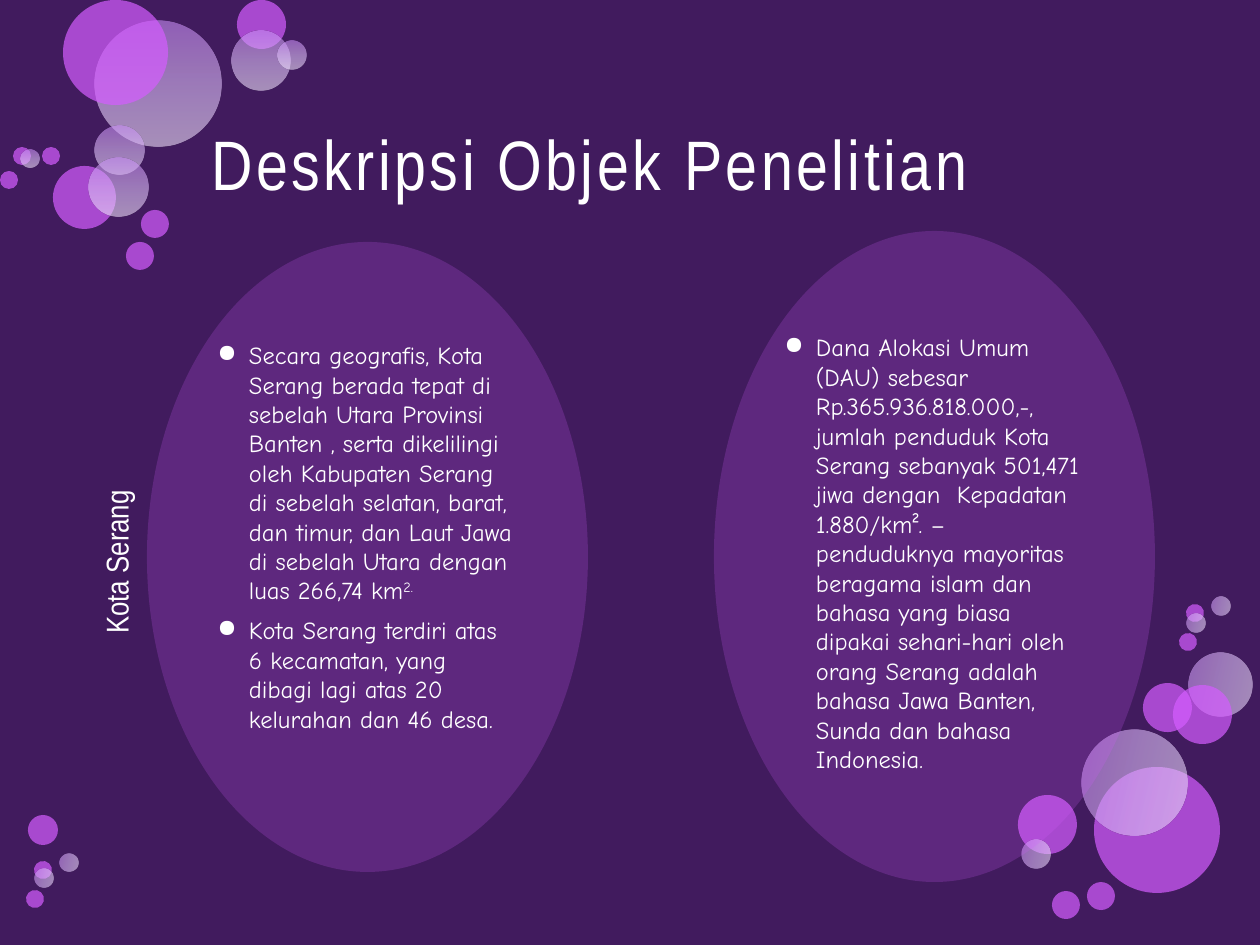
from lxml.etree import SubElement
from pptx import Presentation
from pptx.dml.color import RGBColor
from pptx.enum.shapes import MSO_SHAPE
from pptx.enum.text import MSO_ANCHOR, PP_ALIGN
from pptx.oxml.ns import qn
from pptx.util import Pt

PX = 914400 / 126
COLORS = {
    "background": "411B5E",
    "text": "FFFFFF",
    "vivid": "D55DFF",
    "pale_top": "C68CF2",
    "pale_middle": "DABAF5",
    "pale_bottom": "ECDEF9",
}
HEADING_FONT, BODY_FONT = "Arial Narrow", "Comic Neue"
TILT = 103.3

# Bubbles: left, top, diameter, tone
TOP_BUBBLES = [
    (95, 21, 126, "pale"), (53, 166, 63, "vivid"), (95, 126, 49, "pale"),
    (89, 158, 59, "pale"), (63, 0, 105, "vivid"), (237, 0, 49, "vivid"),
    (231, 31, 59, "pale"), (278, 41, 28, "pale"), (141, 210, 28, "vivid"),
    (13, 147, 18, "vivid"), (126, 242, 28, "vivid"), (0, 171, 18, "vivid"),
    (21, 150, 18, "pale"), (42, 147, 18, "vivid"),
]
BOTTOM_BUBBLES = [
    (1094, 767, 126, "vivid"), (1189, 653, 63, "pale"), (1143, 683, 49, "vivid"),
    (1173, 685, 59, "vivid"), (1082, 730, 105, "pale"), (28, 815, 30, "vivid"),
    (1018, 795, 59, "vivid"), (1022, 840, 28, "pale"), (1052, 891, 28, "vivid"),
    (1186, 604, 18, "vivid"), (1087, 882, 28, "vivid"), (1212, 597, 18, "pale"),
    (1187, 614, 18, "pale"), (1179, 633, 18, "vivid"), (34, 861, 18, "vivid"),
    (60, 854, 18, "pale"), (35, 869, 18, "pale"), (26, 890, 18, "vivid"),
]

GEOGRAPHY = (
    "Secara geografis, Kota Serang berada tepat di sebelah Utara Provinsi Banten , "
    "serta dikelilingi oleh Kabupaten Serang di sebelah selatan, barat, dan timur, "
    "dan Laut Jawa di sebelah Utara dengan luas 266,74 km"
)
DISTRICTS = (
    "Kota Serang terdiri atas 6 kecamatan, yang dibagi lagi atas 20 kelurahan "
    "dan 46 desa."
)
POPULATION = (
    "Dana Alokasi Umum (DAU) sebesar Rp.365.936.818.000,-, jumlah penduduk Kota "
    "Serang sebanyak 501,471 jiwa dengan  Kepadatan 1.880/km². – penduduknya "
    "mayoritas beragama islam dan bahasa yang biasa dipakai sehari-hari oleh orang "
    "Serang adalah  bahasa Jawa Banten, Sunda dan bahasa Indonesia."
)


def px(length):
    return round(length * PX)


def add_text(paragraph, text, *, font, size, spacing=0, raised=0):
    run = paragraph.add_run()
    run.text = text
    run.font.name = font
    run.font.size = Pt(size)
    run.font.color.rgb = RGBColor.from_string(COLORS["text"])
    if spacing:
        run.font._element.set("spc", str(spacing * 100))
    if raised:
        run.font._element.set("baseline", str(raised * 1000))


def set_alpha(color, percent):
    SubElement(color, qn("a:alpha")).set("val", str(percent * 1000))


class SlideBuilder:
    def __init__(self, slide):
        self.slide = slide
        slide.background.fill.solid()
        slide.background.fill.fore_color.rgb = RGBColor.from_string(COLORS["background"])

    def ellipse(self, left, top, width, height):
        oval = self.slide.shapes.add_shape(
            MSO_SHAPE.OVAL, px(left), px(top), px(width), px(height))
        oval.shadow.inherit = False
        oval.line.fill.background()
        return oval

    def fill_vivid(self, oval, opacity):
        oval.fill.solid()
        oval.fill.fore_color.rgb = RGBColor.from_string(COLORS["vivid"])
        set_alpha(next(oval._element.spPr.iter(qn("a:srgbClr"))), opacity)

    def fill_pale(self, oval):
        oval.fill.gradient()
        oval.fill.gradient_angle = 270
        stops = next(oval._element.spPr.iter(qn("a:gsLst")))
        stops.clear()
        for position, name in ((0, "pale_top"), (50, "pale_middle"), (100, "pale_bottom")):
            stop = SubElement(stops, qn("a:gs"))
            stop.set("pos", str(position * 1000))
            color = SubElement(stop, qn("a:srgbClr"))
            color.set("val", COLORS[name])
            set_alpha(color, 60)

    def bubble(self, left, top, diameter, tone, tilted=False):
        bubble = self.ellipse(left, top, diameter, diameter)
        if tone == "pale":
            self.fill_pale(bubble)
        else:
            self.fill_vivid(bubble, 70)
        if tilted:
            bubble.rotation = TILT
            bubble._element.spPr.find(qn("a:xfrm")).set("flipV", "1")

    def heading(self, left, top, width, height, text, *, size, align=PP_ALIGN.LEFT,
                rotation=0, spacing=0):
        box = self.slide.shapes.add_textbox(px(left), px(top), px(width), px(height))
        box.rotation = rotation
        frame = box.text_frame
        frame.word_wrap = True
        frame.vertical_anchor = MSO_ANCHOR.MIDDLE
        paragraph = frame.paragraphs[0]
        paragraph.alignment = align
        add_text(paragraph, text, font=HEADING_FONT, size=size, spacing=spacing)

    def bullet_oval(self, left, top, width, height, items):
        """Each item is a pair: its text and a superscript that follows it."""
        oval = self.ellipse(left, top, width, height)
        self.fill_vivid(oval, 20)
        frame = oval.text_frame
        frame.word_wrap = True
        frame.vertical_anchor = MSO_ANCHOR.TOP
        frame.margin_left = frame.margin_right = px(6)
        frame.margin_top = frame.margin_bottom = px(6)
        for index, (text, superscript) in enumerate(items):
            paragraph = frame.add_paragraph() if index else frame.paragraphs[0]
            paragraph.alignment = PP_ALIGN.LEFT
            paragraph.space_before = Pt(6 if index else 0)
            properties = paragraph._element.get_or_add_pPr()
            properties.set("marL", str(px(31.5)))
            properties.set("indent", str(-px(31.5)))
            SubElement(properties, qn("a:buChar")).set("char", "●")
            add_text(paragraph, text, font=BODY_FONT, size=14)
            if superscript:
                add_text(paragraph, superscript, font=BODY_FONT, size=14, raised=30)


def main():
    presentation = Presentation()
    presentation.slide_width, presentation.slide_height = px(1260), px(945)
    builder = SlideBuilder(presentation.slides.add_slide(presentation.slide_layouts[6]))

    # Bubble decoration
    for bubble in TOP_BUBBLES:
        builder.bubble(*bubble)
    for bubble in BOTTOM_BUBBLES:
        builder.bubble(*bubble, tilted=True)

    # Title and side label
    builder.heading(199, 84, 914, 158, "Deskripsi Objek Penelitian", size=40, spacing=2)
    builder.heading(-120, 518, 472, 88, "Kota Serang", size=18,
                    align=PP_ALIGN.CENTER, rotation=270)

    # Descriptions
    builder.bullet_oval(147, 242, 441, 630, [(GEOGRAPHY, "2."), (DISTRICTS, "")])
    builder.bullet_oval(714, 231, 441, 651, [(POPULATION, "")])

    presentation.save("out.pptx")


if __name__ == "__main__":
    main()
